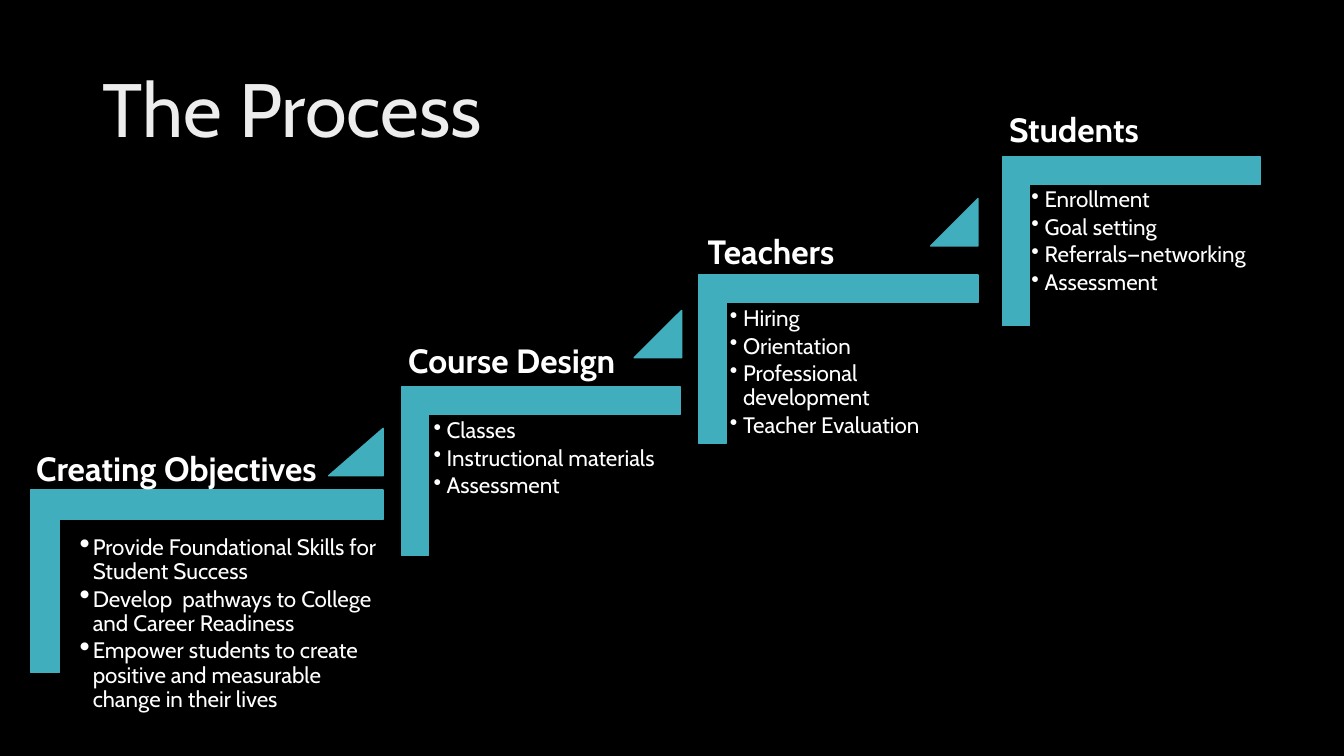
from dataclasses import dataclass

from lxml import etree
from pptx import Presentation
from pptx.dml.color import RGBColor
from pptx.enum.shapes import MSO_SHAPE
from pptx.enum.text import MSO_ANCHOR, PP_ALIGN
from pptx.oxml.ns import qn
from pptx.shapes.autoshape import Shape
from pptx.slide import Slide
from pptx.text.text import _Paragraph
from pptx.util import Inches, Pt

CORNER = MSO_SHAPE.CORNER
TRIANGLE = MSO_SHAPE.ISOSCELES_TRIANGLE
MIDDLE = MSO_ANCHOR.MIDDLE
LEFT = PP_ALIGN.LEFT

FONT = "Cabin"
BLACK = "000000"
WHITE = "FFFFFF"
TITLE_GREY = "EDEDED"
TEAL = "41AEBD"
CORNER_THICKNESS = 0.161
BULLET_INDENT = 0.13
BULLET_INSET = 0.04


@dataclass(frozen=True)
class Box:
    left: float
    top: float
    width: float
    height: float

    def lengths(self) -> tuple[int, int, int, int]:
        return (Inches(self.left), Inches(self.top),
                Inches(self.width), Inches(self.height))

    def before_quarter_turn(self) -> "Box":
        """Return the frame that covers this box once turned by 90 degrees."""
        shift = (self.width - self.height) / 2
        return Box(self.left + shift, self.top - shift, self.height, self.width)


@dataclass(frozen=True)
class Step:
    heading: str
    heading_box: Box
    corner: Box
    points_box: Box
    points: tuple[str, ...]
    triangle: Box | None = None
    bullet_percent: int = 100
    heading_wraps: bool = True


STEPS = (
    Step("Creating Objectives", Box(0.26, 4.39, 3.07, 0.81),
         Box(0.3, 4.86, 3.5, 1.81), Box(0.75, 5.28, 3.05, 2.2),
         ("Provide Foundational Skills for Student Success",
          "Develop  pathways to College and Career Readiness",
          "Empower students to create positive and measurable change in their lives"),
         triangle=Box(3.26, 4.25, 0.54, 0.47), bullet_percent=135),
    Step("Course Design", Box(3.95, 3.32, 2.27, 0.81),
         Box(3.98, 3.84, 2.77, 1.67), Box(4.26, 4.12, 2.51, 2.2),
         ("Classes", "Instructional materials", "Assessment"),
         triangle=Box(6.29, 3.08, 0.47, 0.47), heading_wraps=False),
    Step("Teachers", Box(6.92, 2.24, 1.53, 0.81),
         Box(6.93, 2.73, 2.77, 1.67), Box(7.2, 3.01, 2.51, 2.2),
         ("Hiring", "Orientation", "Professional development", "Teacher Evaluation"),
         triangle=Box(9.23, 1.97, 0.47, 0.47)),
    Step("Students", Box(9.91, 1.03, 3.07, 0.81),
         Box(9.94, 1.56, 2.56, 1.67), Box(10.19, 1.83, 2.31, 2.2),
         ("Enrollment", "Goal setting", "Referrals—networking", "Assessment")),
)


def color(value: str) -> RGBColor:
    return RGBColor.from_string(value)


def add_text(slide: Slide, box: Box, text: str, size: float,
             text_color: str = WHITE, bold: bool = False) -> Shape:
    shape = slide.shapes.add_textbox(*box.lengths())
    frame = shape.text_frame
    frame.word_wrap = True
    frame.text = text
    for para in frame.paragraphs:
        para.alignment = LEFT
        for span in para.runs:
            span.font.name = FONT
            span.font.size = Pt(size)
            span.font.bold = bold
            span.font.color.rgb = color(text_color)
    return shape


def add_bullet(para: _Paragraph, percent: int) -> None:
    properties = para._p.get_or_add_pPr()
    properties.set("marL", str(Inches(BULLET_INDENT)))
    properties.set("indent", str(-Inches(BULLET_INDENT)))
    etree.SubElement(properties, qn("a:buSzPct"), val=str(percent * 1000))
    etree.SubElement(properties, qn("a:buChar"), char="•")


def add_points(slide: Slide, step: Step) -> None:
    frame = add_text(slide, step.points_box, "\n".join(step.points), 16).text_frame
    frame.margin_left = frame.margin_right = Inches(BULLET_INSET)
    frame.margin_top = frame.margin_bottom = Inches(BULLET_INSET)
    for para in frame.paragraphs:
        para.line_spacing = 0.9
        para.space_after = Pt(2.4)
        add_bullet(para, step.bullet_percent)


def add_teal_shape(slide: Slide, kind: MSO_SHAPE, box: Box) -> Shape:
    shape = slide.shapes.add_shape(kind, *box.lengths())
    shape.shadow.inherit = False
    shape.fill.solid()
    shape.fill.fore_color.rgb = color(TEAL)
    shape.line.color.rgb = color(TEAL)
    shape.line.width = Pt(1)
    return shape


def add_step(slide: Slide, step: Step) -> None:
    add_points(slide, step)
    corner = add_teal_shape(slide, CORNER, step.corner.before_quarter_turn())
    corner.rotation = 90
    for index in range(2):
        corner.adjustments[index] = CORNER_THICKNESS
    if step.triangle:
        triangle = add_teal_shape(slide, TRIANGLE, step.triangle)
        triangle.adjustments[0] = 1
    heading = add_text(slide, step.heading_box, step.heading, 24, bold=True)
    heading.text_frame.word_wrap = step.heading_wraps


def main() -> None:
    deck = Presentation()
    deck.slide_width, deck.slide_height = Inches(13.33), Inches(7.5)
    slide = deck.slides.add_slide(deck.slide_layouts[6])
    slide.background.fill.solid()
    slide.background.fill.fore_color.rgb = color(BLACK)

    title = add_text(slide, Box(0.92, 0.4, 11.5, 1.45), "The Process", 54, TITLE_GREY)
    title.text_frame.vertical_anchor = MIDDLE
    title.text_frame.paragraphs[0].line_spacing = 0.9
    for step in STEPS:
        add_step(slide, step)
    deck.save("out.pptx")


if __name__ == "__main__":
    main()
